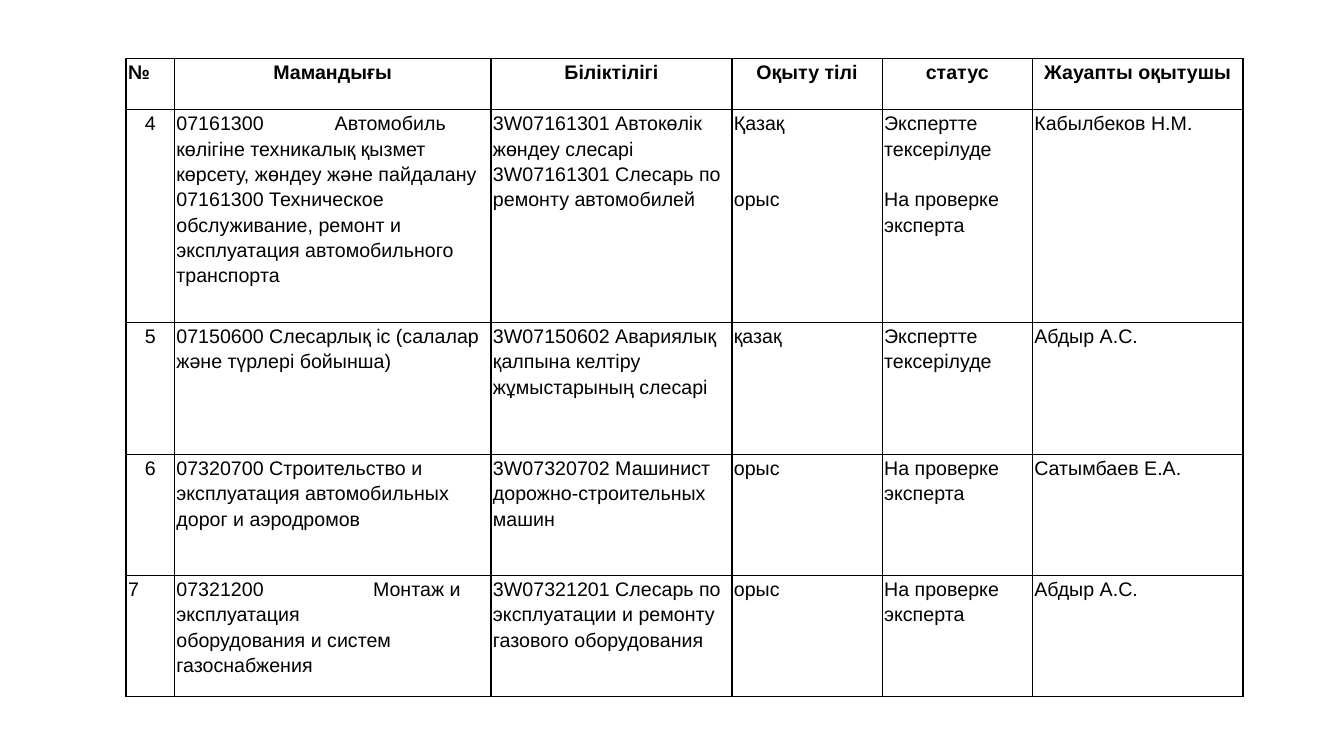
import lxml.etree
import pptx
import pptx.dml.color
import pptx.enum.text
import pptx.oxml.ns
import pptx.util

SLIDE_W, SLIDE_H = 13.33, 7.5
ALIGN = pptx.enum.text.PP_ALIGN
INK, PAPER = "000000", "FFFFFF"
FONT = {"name": "Arial", "size": pptx.util.Pt(14)}
MARGINS = {"margin_left": 0.02, "margin_right": 0.02, "margin_top": 0, "margin_bottom": 0}
LINE = 18
COLUMN_SHARES = [0.48, 3.14, 2.39, 1.49, 1.49, 2.09]
ROW_SHARES = [0.51, 2.11, 1.31, 1.2, 1.2]
TAB_STOPS = {1: 1.57, 4: 1.95}
GAPS = {"орыс": 2 * LINE, "На проверке эксперта": LINE}

HEADER = ["№", "Мамандығы", "Біліктілігі", "Оқыту тілі", "статус", "Жауапты оқытушы"]
ROWS = [
    ["4",
     "07161300\tАвтомобиль көлігіне техникалық қызмет көрсету, жөндеу және пайдалану\n"
     "07161300 Техническое обслуживание, ремонт и эксплуатация автомобильного транспорта",
     "3W07161301 Автокөлік жөндеу слесарі\n3W07161301 Слесарь по ремонту автомобилей",
     "Қазақ\nорыс", "Экспертте тексерілуде\nНа проверке эксперта", "Кабылбеков Н.М."],
    ["5", "07150600 Слесарлық іс (салалар және түрлері бойынша)",
     "3W07150602 Авариялық қалпына келтіру жұмыстарының слесарі",
     "қазақ", "Экспертте тексерілуде", "Абдыр А.С."],
    ["6", "07320700 Строительство и эксплуатация автомобильных дорог и аэродромов",
     "3W07320702 Машинист дорожно-строительных машин",
     "орыс", "На проверке эксперта", "Сатымбаев Е.А."],
    ["7",
     "07321200\tМонтаж и эксплуатация\nоборудования и систем\nгазоснабжения",
     "3W07321201 Слесарь по эксплуатации и ремонту газового оборудования",
     "орыс", "На проверке эксперта", "Абдыр А.С."],
]


def color(hex_value):
    """Turn a hex string into a colour."""
    return pptx.dml.color.RGBColor.from_string(hex_value)


def set_values(target, values):
    """Set each attribute named in a dict."""
    for name, value in values.items():
        setattr(target, name, value)


def add_child(parent, tag, **attributes):
    """Append a drawing element with its attributes."""
    return lxml.etree.SubElement(parent, pptx.oxml.ns.qn(tag), **attributes)


def frame_cell(cell):
    """Give a cell thin borders, a plain fill and narrow margins."""
    tc_pr = cell._tc.get_or_add_tcPr()
    for side in "LRTB":
        ln = add_child(tc_pr, f"a:ln{side}", w=str(pptx.util.Pt(1)))
        add_child(add_child(ln, "a:solidFill"), "a:srgbClr", val=INK)
    cell.fill.solid()
    cell.fill.fore_color.rgb = color(PAPER)
    set_values(cell, {name: pptx.util.Inches(v) for name, v in MARGINS.items()})


def write_cell(cell, text, alignment, bold, tab_stop):
    """Write the paragraphs of a cell, one for each line of text."""
    tf = cell.text_frame
    for i, line in enumerate(text.split("\n")):
        p = tf.add_paragraph() if i else tf.paragraphs[0]
        set_values(p, {"alignment": alignment, "line_spacing": 1.15})
        if i and line in GAPS:
            p.space_before = pptx.util.Pt(GAPS[line])
        if "\t" in line:
            tabs = add_child(p._p.get_or_add_pPr(), "a:tabLst")
            add_child(tabs, "a:tab", pos=str(pptx.util.Inches(tab_stop)), algn="l")
        r = p.add_run()
        r.text = line
        set_values(r.font, {**FONT, "bold": bold})
        r.font.color.rgb = color(INK)


def cell_alignment(row, column):
    """Centre the headings and row numbers except the first and last number cells."""
    if column == 0:
        return ALIGN.LEFT if row in (0, len(ROWS)) else ALIGN.CENTER
    return ALIGN.CENTER if row == 0 else ALIGN.LEFT


def add_register(s, left, top, width, height):
    """Place the table of specialities in the given box."""
    data = [HEADER] + ROWS
    table = s.shapes.add_table(len(data), len(HEADER), left, top, width, height).table
    set_values(table, {"first_row": False, "horz_banding": False})
    for column, share in zip(table.columns, COLUMN_SHARES):
        column.width = int(width * share / sum(COLUMN_SHARES))
    for row, share in zip(table.rows, ROW_SHARES):
        row.height = int(height * share / sum(ROW_SHARES))
    for i, texts in enumerate(data):
        for j, text in enumerate(texts):
            cell = table.cell(i, j)
            frame_cell(cell)
            write_cell(cell, text, cell_alignment(i, j), i == 0, TAB_STOPS.get(i))


def main():
    """Build the slide and save it."""
    prs = pptx.Presentation()
    set_values(prs, {"slide_width": pptx.util.Inches(SLIDE_W),
                     "slide_height": pptx.util.Inches(SLIDE_H)})
    s = prs.slides.add_slide(prs.slide_layouts[6])
    w, h = prs.slide_width, prs.slide_height
    add_register(s, int(w * 1.25 / SLIDE_W), int(h * 0.58 / SLIDE_H),
                 int(w * 11.08 / SLIDE_W), int(h * 6.33 / SLIDE_H))
    prs.save("out.pptx")


if __name__ == "__main__":
    main()
